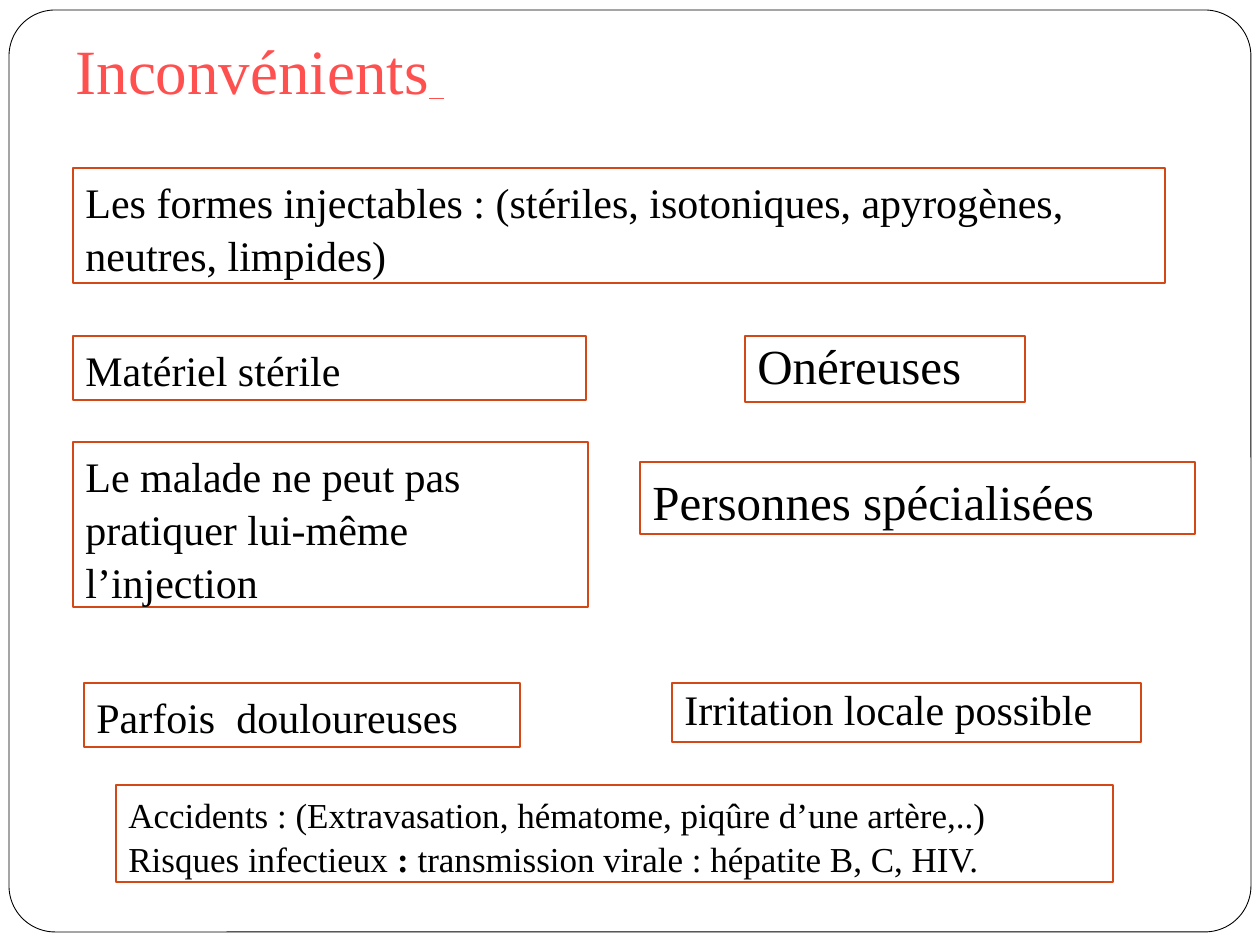
import pptx
import pptx.util
import pptx.dml.color
import pptx.enum.shapes
import pptx.enum.text

SCALE = 914400 / 126  # EMU per px
FONT = "Times New Roman"
COLORS = {"paper": "FFFFFF", "ink": "000000", "edge": "D34817", "title": "FF5050"}

# left, top, width, height, text size, line spacing, paragraphs of (text, bold) runs
BOXES = [
    (73, 168, 1092, 115, 24, 1.05,
     [[("Les formes injectables : (stériles, isotoniques, apyrogènes, neutres, limpides)", False)]]),
    (745, 336, 280, 66, 28, 0.9, [[("Onéreuses", False)]]),
    (84, 683, 436, 64, 24, 1.05, [[("Parfois  douloureuses", False)]]),
    (672, 683, 469, 59, 24, 0.9, [[("Irritation locale possible", False)]]),
    (640, 462, 555, 72, 28, 1.05, [[("Personnes spécialisées", False)]]),
    (73, 336, 513, 64, 24, 1.05, [[("Matériel stérile", False)]]),
    (73, 442, 515, 165, 24, 1.05,
     [[("Le malade ne peut pas pratiquer lui-même l’injection", False)]]),
    (116, 785, 997, 97, 20, 1.05,
     [[("Accidents : (Extravasation, hématome, piqûre d’une artère,..)", False)],
      [("Risques infectieux", False), (" : ", True),
       ("transmission virale : hépatite B, C, HIV.", False)]]),
]


def px(num):
    return pptx.util.Emu(round(num * SCALE))


def color(name):
    return pptx.dml.color.RGBColor.from_string(COLORS[name])


def place(shape, left, top, width, height):
    shape.left, shape.top = px(left), px(top)
    shape.width, shape.height = px(width), px(height)


def add_run(para, text, size, tint, font=FONT, bold=False):
    run = para.add_run()
    run.text = text
    run.font.name = font
    run.font.size = pptx.util.Pt(size)
    run.font.bold = bold
    run.font.color.rgb = color(tint)
    return run


def add_rect(slide, kind, area, edge, weight):
    shape = slide.shapes.add_shape(kind, *[px(num) for num in area])
    shape.shadow.inherit = False
    shape.line.color.rgb = color(edge)
    shape.line.width = pptx.util.Pt(weight)
    return shape


def add_frame(slide):
    kind = pptx.enum.shapes.MSO_SHAPE.ROUNDED_RECTANGLE
    frame = add_rect(slide, kind, (9, 10, 1242, 922), "ink", 0.5)
    frame.adjustments[0] = 0.05
    frame.fill.solid()
    frame.fill.fore_color.rgb = color("paper")


def set_title(slide):
    title = slide.shapes.title
    place(title, 63, 0, 620, 198)
    frame = title.text_frame
    frame.auto_size = pptx.enum.text.MSO_AUTO_SIZE.NONE
    frame.vertical_anchor = pptx.enum.text.MSO_ANCHOR.TOP
    frame.margin_top = px(24)
    para = frame.paragraphs[0]
    para.alignment = pptx.enum.text.PP_ALIGN.LEFT
    add_run(para, "Inconvénients", 36, "title")
    tail = add_run(para, " ", 40, "title", "Karla")
    tail.font.italic = True
    tail.font.underline = True


def add_box(slide, left, top, width, height, size, space, paras):
    kind = pptx.enum.shapes.MSO_SHAPE.RECTANGLE
    box = add_rect(slide, kind, (left, top, width, height), "edge", 0.75)
    box.fill.background()
    frame = box.text_frame
    frame.word_wrap = True
    frame.vertical_anchor = pptx.enum.text.MSO_ANCHOR.TOP
    for i, runs in enumerate(paras):
        para = frame.add_paragraph() if i else frame.paragraphs[0]
        para.alignment = pptx.enum.text.PP_ALIGN.LEFT
        para.line_spacing = space
        for text, bold in runs:
            add_run(para, text, size, "ink", bold=bold)


def main():
    deck = pptx.Presentation()
    deck.slide_width, deck.slide_height = px(1260), px(945)
    slide = deck.slides.add_slide(deck.slide_layouts[5])

    # Rounded page frame goes behind the title
    add_frame(slide)
    tree = slide.shapes.title.element.getparent()
    tree.append(slide.shapes.title.element)
    set_title(slide)

    # Outlined statements
    for box in BOXES:
        add_box(slide, *box)

    deck.save("out.pptx")


if __name__ == "__main__":
    main()
